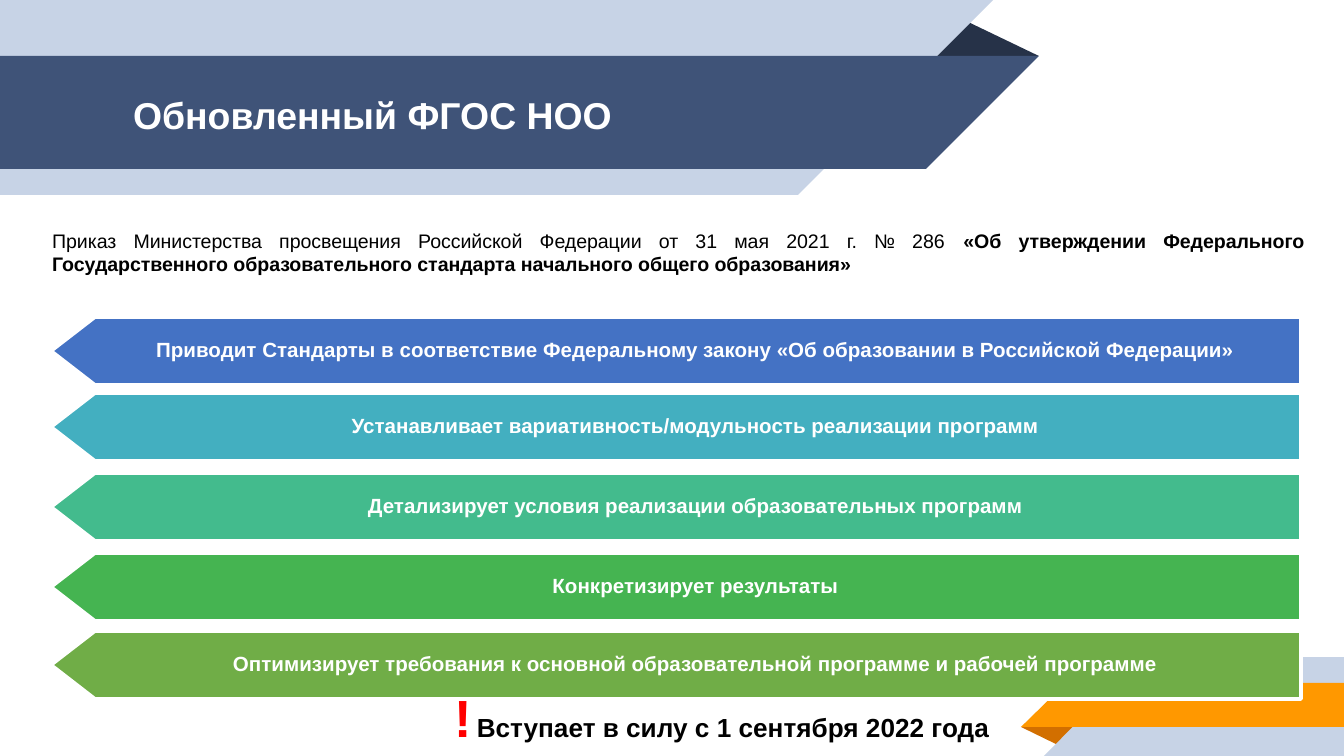
import pptx
import pptx.dml.color
import pptx.enum.text
import pptx.util

EMU_PER_PX = 9144000 / 1344
ALIGN = pptx.enum.text.PP_ALIGN
MIDDLE = pptx.enum.text.MSO_ANCHOR.MIDDLE

RIBBONS = [
    ("263248", [(925, 56), (962, 19), (1039, 56)]),
    ("C7D3E6", [(0, 0), (993, 0), (798, 195), (0, 195)]),
    ("3F5378", [(0, 56), (1039, 56), (926, 169), (0, 169)]),
    ("D26F00", [(1021, 727), (1079, 727), (1060, 746)]),
    ("C7D3E6", [(1044, 756), (1142, 657), (1344, 657), (1344, 756)]),
    ("FF9800", [(1021, 727), (1066, 683), (1344, 683), (1344, 727)]),
]
ARROWS = [
    (317, "4472C4", "Приводит Стандарты в соответствие Федеральному закону «Об образовании в Российской Федерации»"),
    (393, "43AFC0", "Устанавливает вариативность/модульность реализации программ"),
    (473, "43BB8D", "Детализирует условия реализации образовательных программ"),
    (553, "45B451", "Конкретизирует результаты"),
    (631, "70AD47", "Оптимизирует требования к основной образовательной программе и рабочей программе"),
]


def px(length):
    return pptx.util.Emu(round(length * EMU_PER_PX))


def color(value):
    return pptx.dml.color.RGBColor.from_string(value)


def format_span(span, size, ink, bold):
    span.font.name = "Arial"
    span.font.size = pptx.util.Pt(size)
    span.font.bold = bold
    span.font.color.rgb = color(ink)


def set_insets(frame, left, top, right, bottom):
    frame.margin_left, frame.margin_top = px(left), px(top)
    frame.margin_right, frame.margin_bottom = px(right), px(bottom)


def add_polygon(page, points, fill):
    builder = page.shapes.build_freeform(*points[0], scale=EMU_PER_PX)
    builder.add_line_segments(points[1:], close=True)
    shape = builder.convert_to_shape()
    shape.shadow.inherit = False
    shape.fill.solid()
    shape.fill.fore_color.rgb = color(fill)
    shape.line.fill.background()
    return shape


def add_arrow(page, top, fill, text):
    left, shoulder, right, height = 51, 95, 1301, 68
    bottom = top + height
    arrow = add_polygon(page, [(right, bottom), (shoulder, bottom), (left, top + height // 2),
                               (shoulder, top), (right, top)], fill)
    arrow.line.color.rgb = color("FFFFFF")
    arrow.line.width = pptx.util.Pt(2)
    frame = arrow.text_frame
    frame.text = text
    frame.word_wrap = True
    frame.vertical_anchor = MIDDLE
    set_insets(frame, 54, 8, 15, 8)
    para = frame.paragraphs[0]
    para.alignment = ALIGN.CENTER
    para.line_spacing = 0.9
    format_span(para.runs[0], 11, "FFFFFF", True)


def add_text(page, left, top, width, height, align, spans):
    box = page.shapes.add_textbox(px(left), px(top), px(width), px(height))
    box.text_frame.word_wrap = True
    para = box.text_frame.paragraphs[0]
    para.alignment = align
    for text, size, ink, bold in spans:
        span = para.add_run()
        span.text = text
        format_span(span, size, ink, bold)


def place_title(page, text):
    title = page.shapes.title
    title.left, title.top, title.width, title.height = px(120), px(58), px(888), px(113)
    frame = title.text_frame
    frame.text = text
    frame.vertical_anchor = MIDDLE
    set_insets(frame, 13, 13, 13, 13)
    para = frame.paragraphs[0]
    para.alignment = ALIGN.LEFT
    format_span(para.runs[0], 20, "FFFFFF", True)
    page.shapes._spTree.append(title._element)


def main():
    deck = pptx.Presentation()
    deck.slide_width, deck.slide_height = px(1344), px(756)
    page = deck.slides.add_slide(deck.slide_layouts[5])
    for fill, points in RIBBONS:
        add_polygon(page, points, fill)
    place_title(page, "Обновленный ФГОС НОО")
    add_text(page, 39, 222, 1279, 82, ALIGN.JUSTIFY, [
        ("Приказ Министерства просвещения Российской Федерации от 31 мая 2021 г. № 286 ", 10.5, "000000", False),
        ("«Об утверждении Федерального Государственного образовательного стандарта "
         "начального общего образования»", 10.5, "000000", True),
    ])
    add_text(page, 441, 679, 860, 76, ALIGN.LEFT, [
        ("!", 28, "FF0000", True),
        (" ", 10, "000000", False),
        ("Вступает в силу с 1 сентября 2022 года", 14, "000000", True),
    ])
    for top, fill, text in ARROWS:
        add_arrow(page, top, fill, text)
    deck.save("out.pptx")


if __name__ == "__main__":
    main()
